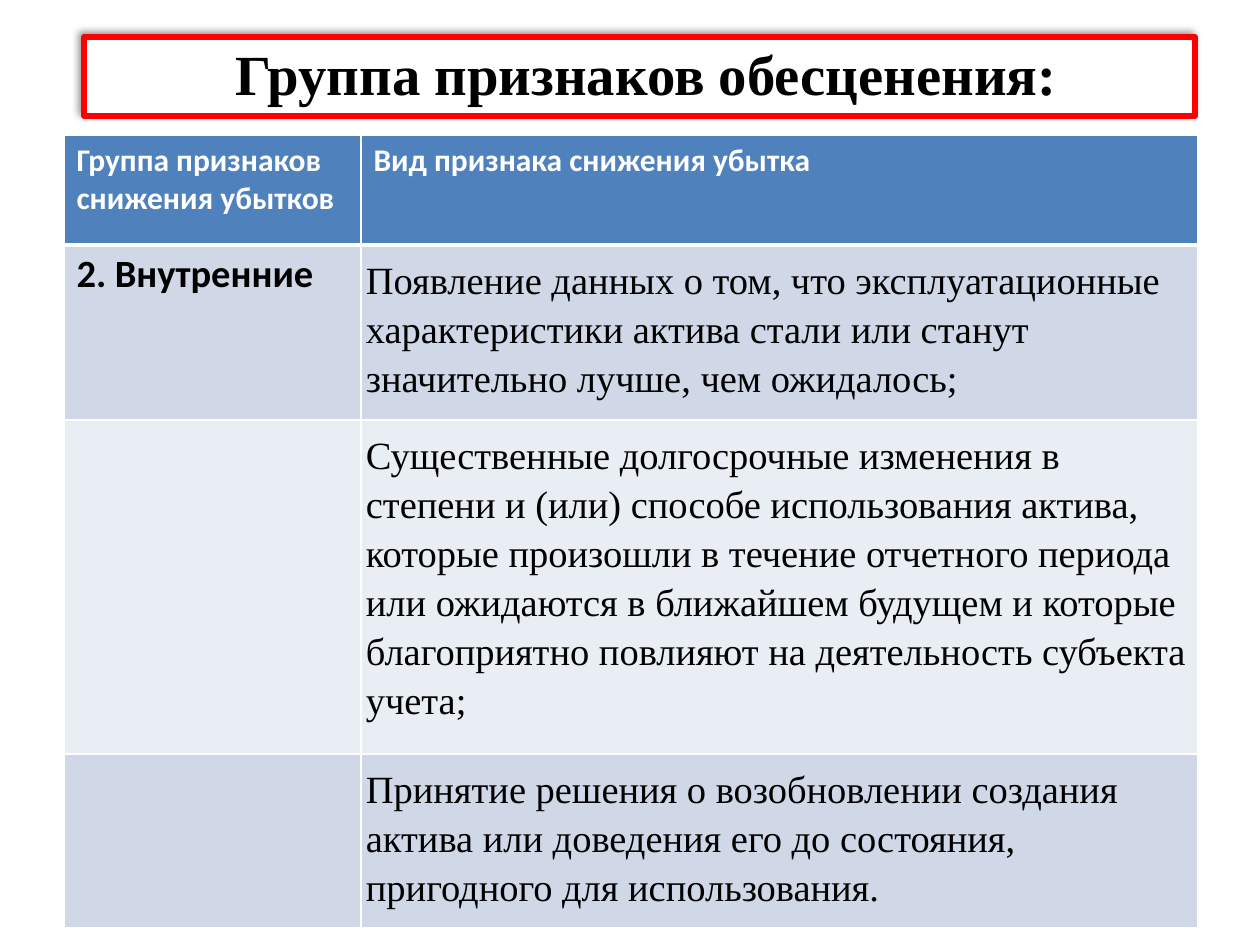
from lxml import etree
from pptx import Presentation
from pptx.dml.color import RGBColor
from pptx.enum.text import MSO_ANCHOR, MSO_AUTO_SIZE, PP_ALIGN
from pptx.oxml.ns import qn
from pptx.util import Emu, Pt

EMU_PER_INCH = 914400
PX_PER_INCH = 126
TITLE_ONLY = 5
CENTER, LEFT = PP_ALIGN.CENTER, PP_ALIGN.LEFT
MIDDLE, TOP = MSO_ANCHOR.MIDDLE, MSO_ANCHOR.TOP
NO_AUTOFIT = MSO_AUTO_SIZE.NONE

WHITE = RGBColor(0xFF, 0xFF, 0xFF)
BLACK = RGBColor(0x00, 0x00, 0x00)
RED = RGBColor(0xFF, 0x00, 0x00)
HEADER_BLUE = RGBColor(0x4F, 0x81, 0xBD)
BAND_DARK = RGBColor(0xD0, 0xD8, 0xE8)
BAND_LIGHT = RGBColor(0xE9, 0xED, 0xF4)

TITLE_FONT = {"name": "Times New Roman", "size": Pt(32.4), "bold": True}
HEADER_FONT = {"name": "Calibri", "size": Pt(18), "bold": True}
GROUP_FONT = {"name": "Calibri", "size": Pt(22), "bold": True}
SIGN_FONT = {"name": "Times New Roman", "size": Pt(22), "bold": False}

COLUMN_WIDTHS = [297, 837]
ROW_HEIGHTS = [110, 175, 334, 174]
HEADERS = [
    ["Группа признаков", "снижения убытков"],
    ["Вид признака снижения убытка"],
]
GROUPS = ["2. Внутренние", "", ""]
SIGNS = [
    "Появление данных о том, что эксплуатационные характеристики актива "
    "стали или станут значительно лучше, чем ожидалось;",
    "Существенные долгосрочные изменения в степени и (или) способе "
    "использования актива, которые произошли в течение отчетного периода "
    "или ожидаются в ближайшем будущем и которые благоприятно повлияют "
    "на деятельность субъекта учета;",
    "Принятие решения о возобновлении создания актива или доведения его "
    "до состояния, пригодного для использования.",
]


def px(length):
    return Emu(round(length * EMU_PER_INCH / PX_PER_INCH))


def set_attributes(target, values):
    for name, value in values.items():
        setattr(target, name, value)


def write_lines(frame, lines, font, color, align=LEFT, spacing=None):
    for index, line in enumerate(lines):
        para = frame.paragraphs[0] if index == 0 else frame.add_paragraph()
        set_attributes(para, {"alignment": align, "line_spacing": spacing})
        span = para.add_run()
        span.text = line
        set_attributes(span.font, font)
        span.font.color.rgb = color


def add_shadow(shape, blur, distance, degrees, opacity):
    effects = etree.SubElement(shape.element.spPr, qn("a:effectLst"))
    shadow = etree.SubElement(
        effects, qn("a:outerShdw"), blurRad=str(Pt(blur)),
        dist=str(Pt(distance)), dir=str(degrees * 60000),
        algn="br", rotWithShape="0")
    color = etree.SubElement(shadow, qn("a:srgbClr"), val=str(BLACK))
    etree.SubElement(color, qn("a:alpha"), val=str(opacity * 1000))


def add_title(page):
    box = page.shapes.title
    set_attributes(box, {"left": px(84), "top": px(37),
                         "width": px(1111), "height": px(79)})
    box.fill.solid()
    box.fill.fore_color.rgb = WHITE
    box.line.color.rgb = RED
    box.line.width = Pt(3)
    add_shadow(box, blur=4, distance=3, degrees=225, opacity=40)
    set_attributes(box.text_frame, {
        "auto_size": NO_AUTOFIT, "word_wrap": True, "vertical_anchor": MIDDLE,
        "margin_left": px(26), "margin_right": px(13),
        "margin_top": px(0), "margin_bottom": px(8)})
    write_lines(box.text_frame, ["Группа признаков обесценения:"],
                TITLE_FONT, BLACK, CENTER)


def set_borders(cell, bottom):
    properties = cell._tc.get_or_add_tcPr()
    widths = {"a:lnL": 1, "a:lnR": 1, "a:lnT": 1, "a:lnB": bottom}
    for position, (tag, width) in enumerate(widths.items()):
        line = etree.Element(qn(tag), w=str(Pt(width)))
        fill = etree.SubElement(line, qn("a:solidFill"))
        etree.SubElement(fill, qn("a:srgbClr"), val=str(WHITE))
        properties.insert(position, line)


def fill_cell(cell, lines, font, ink, paper, bottom=1, spacing=None):
    cell.fill.solid()
    cell.fill.fore_color.rgb = paper
    cell.vertical_anchor = TOP
    set_borders(cell, bottom)
    write_lines(cell.text_frame, lines, font, ink, spacing=spacing)


def add_signs_table(page):
    table = page.shapes.add_table(
        len(ROW_HEIGHTS), len(COLUMN_WIDTHS), px(64), px(135),
        px(sum(COLUMN_WIDTHS)), px(sum(ROW_HEIGHTS))).table
    for column, width in zip(table.columns, COLUMN_WIDTHS):
        column.width = px(width)
    for row, height in zip(table.rows, ROW_HEIGHTS):
        row.height = px(height)

    # Header row
    for column, lines in enumerate(HEADERS):
        fill_cell(table.cell(0, column), lines, HEADER_FONT, WHITE,
                  HEADER_BLUE, bottom=3)

    # Banded rows: group on the left, sign on the right
    for row, (group, sign) in enumerate(zip(GROUPS, SIGNS), start=1):
        paper = BAND_DARK if row % 2 else BAND_LIGHT
        fill_cell(table.cell(row, 0), [group] if group else [],
                  GROUP_FONT, BLACK, paper)
        sign_cell = table.cell(row, 1)
        set_attributes(sign_cell, {
            "margin_left": px(5), "margin_right": px(5),
            "margin_top": px(9), "margin_bottom": px(9)})
        fill_cell(sign_cell, [sign], SIGN_FONT, BLACK, paper, spacing=1.15)


def main():
    deck = Presentation()
    set_attributes(deck, {"slide_width": px(1260), "slide_height": px(945)})
    page = deck.slides.add_slide(deck.slide_layouts[TITLE_ONLY])
    add_title(page)
    add_signs_table(page)
    deck.save("out.pptx")


if __name__ == "__main__":
    main()
